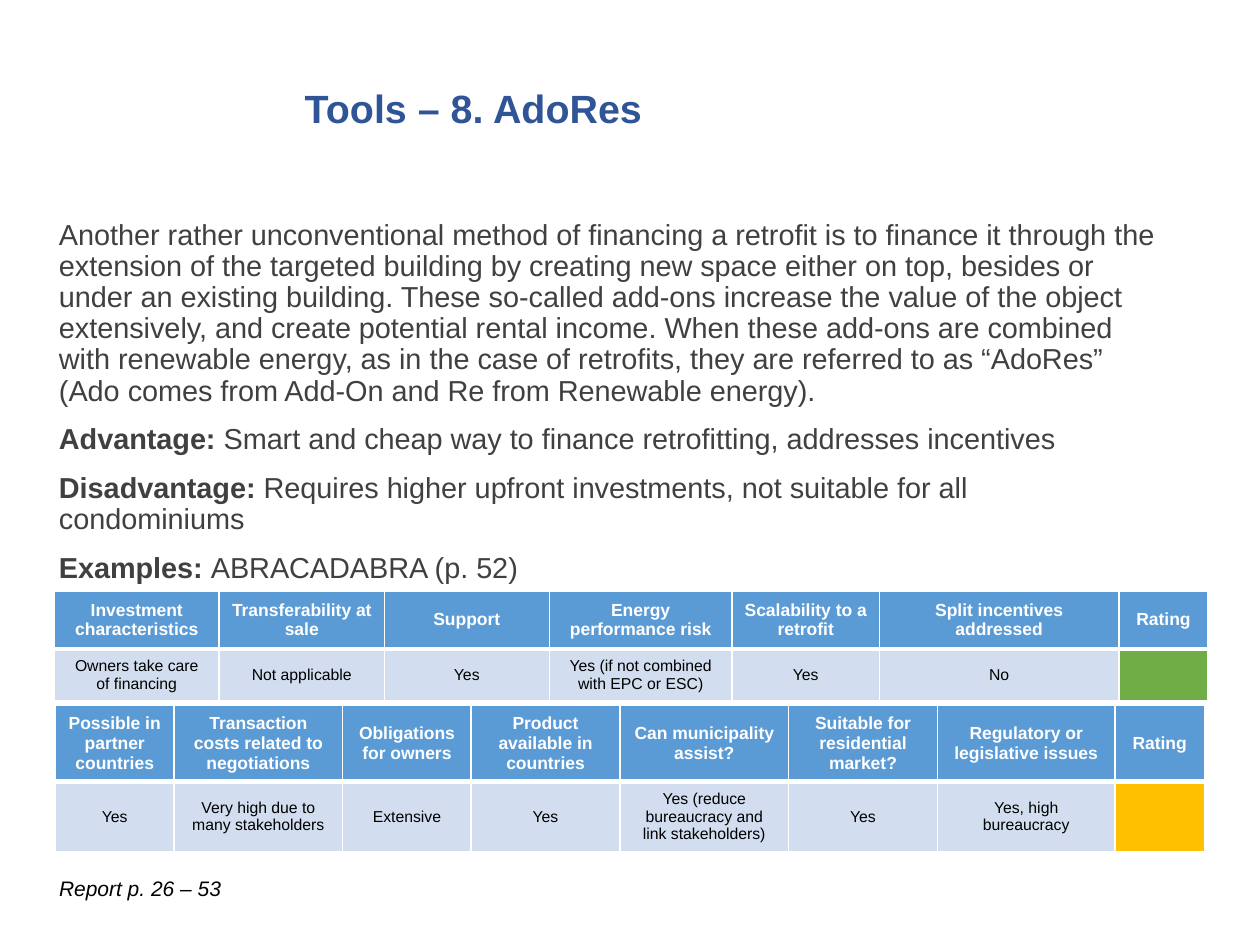
from lxml.etree import SubElement
from pptx import Presentation
from pptx.dml.color import RGBColor
from pptx.enum.text import MSO_ANCHOR as Anchor, PP_ALIGN as Align
from pptx.oxml.ns import qn
from pptx.util import Inches, Pt

COLORS = {
    "title": "2F5597", "body": "404040", "black": "000000", "white": "FFFFFF",
    "header": "5B9BD5", "answer": "D2DEEF", "good": "70AD47", "medium": "FFC000",
}

deck = Presentation()
deck.slide_width, deck.slide_height = Inches(10), Inches(7.5)
COL, ROW = deck.slide_width // 100, deck.slide_height // 75
slide = deck.slides.add_slide(deck.slide_layouts[6])


def write(frame, paragraphs, size, color, bold=False, italic=False,
          align=Align.LEFT, spacing=1.0, before=0):
    """Fill a frame; each paragraph is a (bold lead, following text) pair."""
    frame.word_wrap = True
    for index, (lead, rest) in enumerate(paragraphs):
        paragraph = frame.add_paragraph() if index else frame.paragraphs[0]
        paragraph.alignment, paragraph.line_spacing = align, spacing
        paragraph.space_before = Pt(before if index else 0)
        for text, strong in ((lead, True), (rest, bold)):
            if text:
                run = paragraph.add_run()
                run.text = text
                font = run.font
                font.name, font.size = "Arial", Pt(size)
                font.bold, font.italic = strong, italic
                font.color.rgb = RGBColor.from_string(COLORS[color])


def style_cell(cell, fill, bottom):
    """Draw white borders, then the cell's fill."""
    properties = cell._tc.get_or_add_tcPr()
    for side, width in (("L", 1), ("R", 1), ("T", 1), ("B", bottom)):
        line = SubElement(properties, qn(f"a:ln{side}"), w=str(Pt(width)))
        SubElement(SubElement(line, qn("a:solidFill")), qn("a:srgbClr"), val=COLORS["white"])
    cell.fill.solid()
    cell.fill.fore_color.rgb = RGBColor.from_string(COLORS[fill])
    cell.vertical_anchor = Anchor.MIDDLE


# Description
description = slide.shapes.add_textbox(int(3.7 * COL), 17 * ROW, int(89.4 * COL), 43 * ROW)
write(description.text_frame, [
    ("", "Another rather unconventional method of financing a retrofit is to finance it "
         "through the extension of the targeted building by creating new space either on top, "
         "besides or under an existing building. These so-called add-ons increase the value of "
         "the object extensively, and create potential rental income. When these add-ons are "
         "combined with renewable energy, as in the case of retrofits, they are referred to as "
         "“AdoRes” (Ado comes from Add-On and Re from Renewable energy)."),
    ("Advantage:", " Smart and cheap way to finance retrofitting, addresses incentives"),
    ("Disadvantage:", " Requires higher upfront investments, not suitable for all condominiums"),
    ("Examples: ", "ABRACADABRA (p. 52)"),
], size=16.5, color="body", spacing=0.9, before=10)

# Title
title = slide.shapes.add_textbox(int(23.2 * COL), 6 * ROW, int(62.8 * COL), int(5.6 * ROW))
title.text_frame.vertical_anchor = Anchor.MIDDLE
write(title.text_frame, [("", "Tools – 8. AdoRes")],
      size=22.5, color="title", bold=True, spacing=0.9)

# Source
source = slide.shapes.add_textbox(int(3.7 * COL), 69 * ROW, int(23.2 * COL), 3 * ROW)
write(source.text_frame, [("", "Report p. 26 – 53")], size=12, color="black", italic=True)

# Assessments: left, top, row heights, rating colour, (column width, criterion, answer)
assessments = [
    (4.3, 46.9, (4.6, 4.1), "good", [
        (13.1, "Investment characteristics", "Owners take care of financing"),
        (13.1, "Transferability at sale", "Not applicable"),
        (13.1, "Support", "Yes"),
        (14.5, "Energy performance risk", "Yes (if not combined with EPC or ESC)"),
        (11.7, "Scalability to a retrofit", "Yes"),
        (19, "Split incentives addressed", "No"),
        (7.1, "Rating", ""),
    ]),
    (4.4, 56, (5.9, 5.6), "medium", [
        (9.4, "Possible in partner countries", "Yes"),
        (13.4, "Transaction costs related to negotiations", "Very high due to many stakeholders"),
        (10.2, "Obligations for owners", "Extensive"),
        (11.8, "Product available in countries", "Yes"),
        (13.4, "Can municipality assist?", "Yes (reduce bureaucracy and link stakeholders)"),
        (11.8, "Suitable for residential market?", "Yes"),
        (14.1, "Regulatory or legislative issues", "Yes, high bureaucracy"),
        (7.1, "Rating", ""),
    ]),
]
for left, top, heights, rating, criteria in assessments:
    total_width = sum(width for width, _, _ in criteria)
    table = slide.shapes.add_table(
        2, len(criteria), int(left * COL), int(top * ROW),
        int(total_width * COL), int(sum(heights) * ROW)).table
    for row, height in zip(table.rows, heights):
        row.height = int(height * ROW)
    for column, (width, criterion, answer) in enumerate(criteria):
        table.columns[column].width = int(width * COL)
        header, result = table.cell(0, column), table.cell(1, column)
        style_cell(header, "header", bottom=3)
        style_cell(result, "answer" if answer else rating, bottom=1)
        write(header.text_frame, [("", criterion)],
              size=10, color="white", bold=True, align=Align.CENTER)
        write(result.text_frame, [("", answer)], size=9, color="black", align=Align.CENTER)

deck.save("out.pptx")
